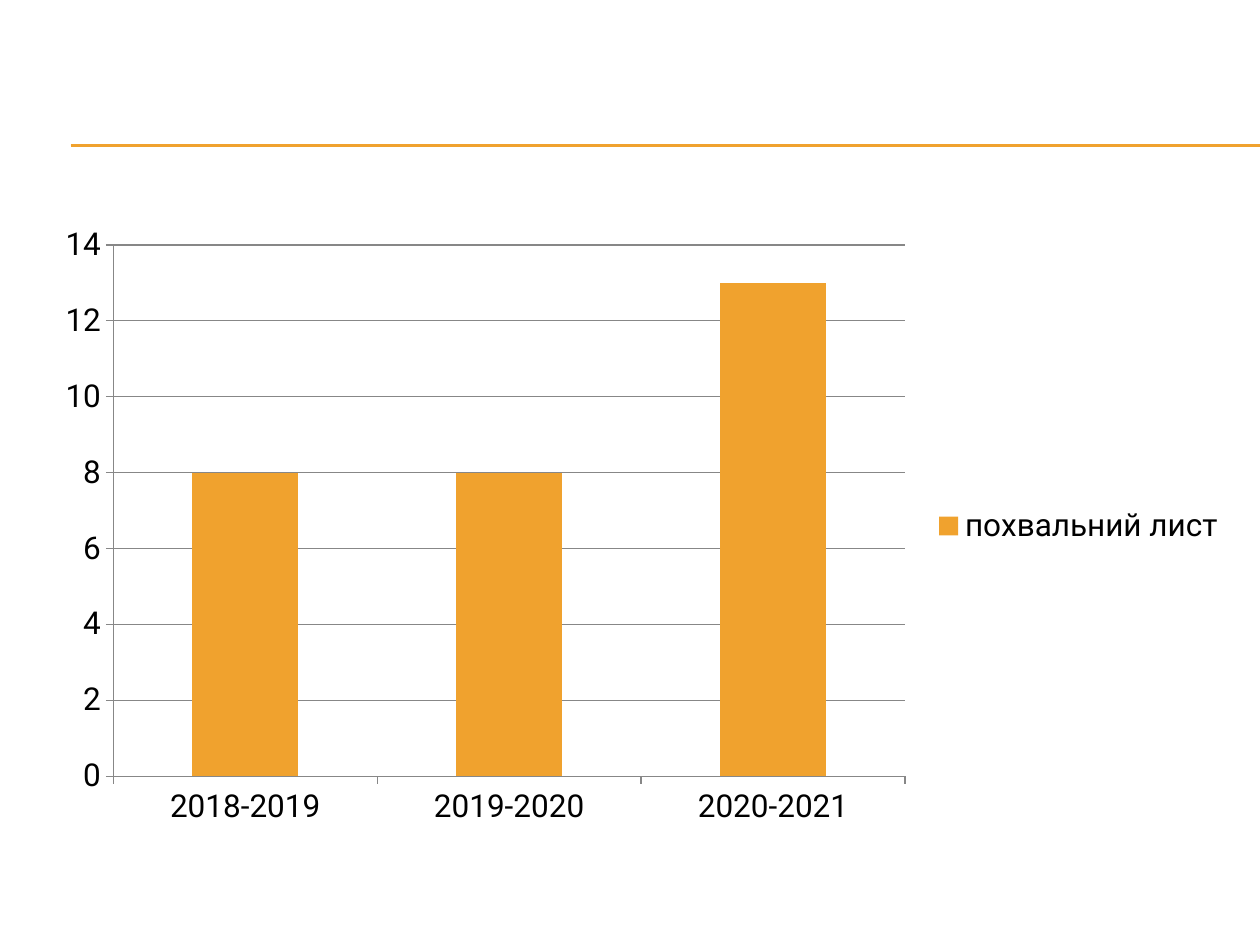
import pptx
import pptx.chart.data
import pptx.dml.color
import pptx.enum.chart
import pptx.enum.shapes
import pptx.util
import lxml.etree


def color(value):
    return pptx.dml.color.RGBColor.from_string(value)


class SlideBuilder:
    accent = "F0A22E"
    ink = "000000"
    grid = "878787"
    font = "Roboto"
    size = 18

    def __init__(self, deck):
        self.deck = deck
        self.page = deck.slides.add_slide(deck.slide_layouts[6])
        self.page.background.fill.solid()
        self.page.background.fill.fore_color.rgb = color("FFFFFF")

    def across(self, share):
        return round(self.deck.slide_width * share)

    def down(self, share):
        return round(self.deck.slide_height * share)

    def stroke(self, line, value):
        line.color.rgb = color(value)
        line.width = pptx.util.Pt(0.75)

    def rule(self, left, right, top):
        line = self.page.shapes.add_connector(
            pptx.enum.shapes.MSO_CONNECTOR.STRAIGHT,
            self.across(left), self.down(top), self.across(right), self.down(top))
        self.stroke(line.line, self.accent)
        namespace = pptx.oxml.ns.qn("a:effectLst")
        lxml.etree.SubElement(line._element.spPr, namespace)

    def columns(self, left, top, width, height, categories, name, values):
        data = pptx.chart.data.CategoryChartData()
        data.categories = categories
        data.add_series(name, values)
        chart = self.page.shapes.add_chart(
            pptx.enum.chart.XL_CHART_TYPE.COLUMN_CLUSTERED,
            self.across(left), self.down(top),
            self.across(width), self.down(height), data).chart
        chart.has_title = False
        chart.font.name = self.font
        chart.font.size = pptx.util.Pt(self.size)
        chart.font.color.rgb = color(self.ink)
        chart.has_legend = True
        chart.legend.position = pptx.enum.chart.XL_LEGEND_POSITION.RIGHT
        chart.legend.include_in_layout = False
        plot = chart.plots[0]
        plot.gap_width = 150
        plot.vary_by_categories = False
        fill = plot.series[0].format.fill
        fill.solid()
        fill.fore_color.rgb = color(self.accent)
        for axis in (chart.category_axis, chart.value_axis):
            axis.major_tick_mark = pptx.enum.chart.XL_TICK_MARK.OUTSIDE
            axis.minor_tick_mark = pptx.enum.chart.XL_TICK_MARK.NONE
            self.stroke(axis.format.line, self.grid)
        chart.value_axis.minimum_scale = 0
        chart.value_axis.maximum_scale = 14
        chart.value_axis.major_unit = 2
        chart.value_axis.has_major_gridlines = True
        self.stroke(chart.value_axis.major_gridlines.format.line, self.grid)


def main():
    deck = pptx.Presentation()
    deck.slide_width = pptx.util.Inches(10)
    deck.slide_height = pptx.util.Inches(7.5)
    builder = SlideBuilder(deck)
    for top in (1.15, 1.16):
        builder.rule(0.056, 1, top / 7.5)
    builder.columns(0.033, 1.7 / 7.5, 0.95, 0.66,
                    ["2018-2019", "2019-2020", "2020-2021"],
                    "похвальний лист", [8, 8, 13])
    deck.save("out.pptx")


if __name__ == "__main__":
    main()
